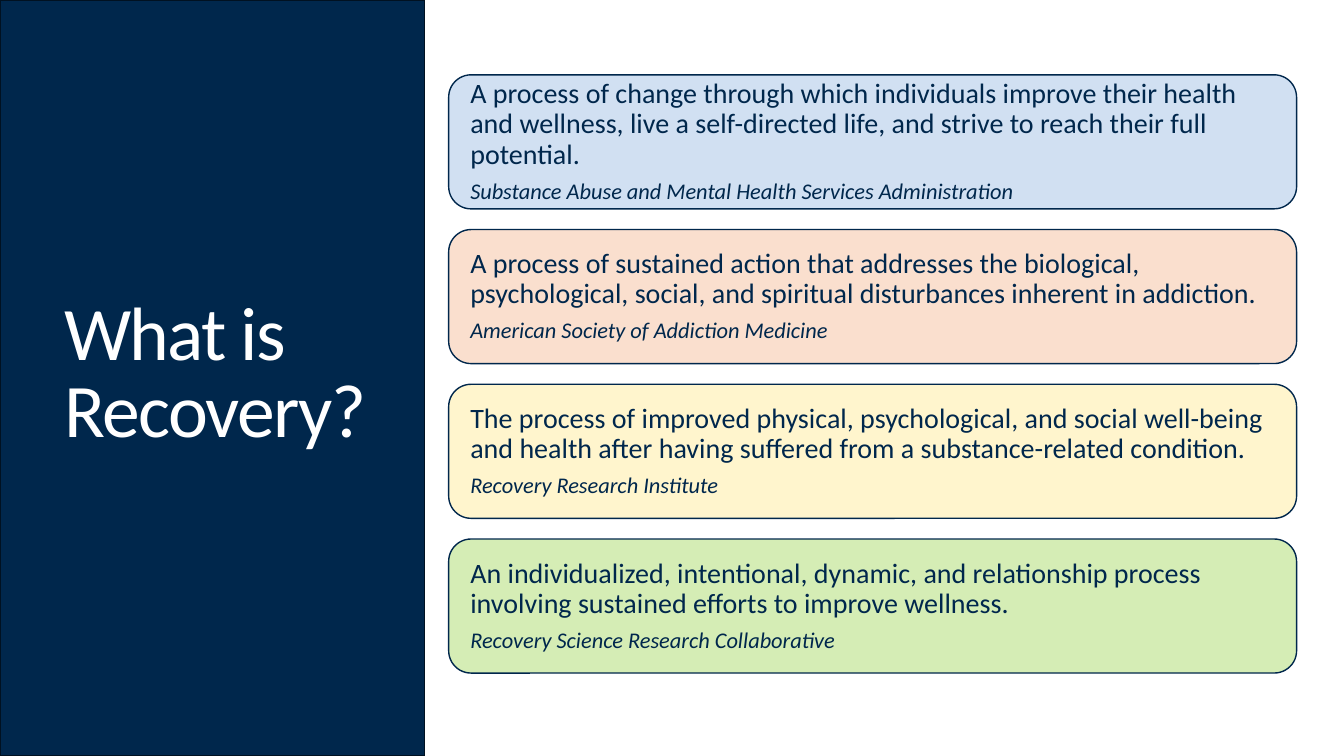
"""Build the "What is Recovery?" slide: a title panel beside four definition cards."""
from pptx import Presentation
from pptx.dml.color import RGBColor
from pptx.enum.shapes import MSO_SHAPE
from pptx.enum.text import MSO_ANCHOR, PP_ALIGN
from pptx.util import Inches, Pt

FONT = "Calibri"
NAVY, EDGE, WHITE = "00274C", "001121", "FFFFFF"
TITLE = "What is Recovery?"
CARDS = [
    ("A process of change through which individuals improve their health and wellness, "
     "live a self-directed life, and strive to reach their full potential.",
     "Substance Abuse and Mental Health Services Administration", "D1E0F2"),
    ("A process of sustained action that addresses the biological, psychological, social, "
     "and spiritual disturbances inherent in addiction.",
     "American Society of Addiction Medicine", "FADFCE"),
    ("The process of improved physical, psychological, and social well-being and health "
     "after having suffered from a substance-related condition.",
     "Recovery Research Institute", "FFF5CD"),
    ("An individualized, intentional, dynamic, and relationship process involving "
     "sustained efforts to improve wellness.",
     "Recovery Science Research Collaborative", "D5EDB5"),
]
SLIDE_W, SLIDE_H, PANEL_W = 13.33, 7.5, 4.21
CARD_X, CARD_W, CARD_H, GAP, PAD = 4.45, 8.41, 1.33, 0.205, 0.15


def color(value):
    return RGBColor.from_string(value)


def add_box(slide, kind, x, y, w, h, fill, line):
    sp = slide.shapes.add_shape(kind, Inches(x), Inches(y), Inches(w), Inches(h))
    sp.shadow.inherit = False
    sp.fill.solid()
    sp.fill.fore_color.rgb = color(fill)
    sp.line.color.rgb = color(line)
    sp.line.width = Pt(1)
    return sp


def style(p, size, ink, spacing, italic=False):
    p.alignment = PP_ALIGN.LEFT
    p.line_spacing = spacing
    font = p.runs[0].font
    font.name, font.size, font.italic = FONT, Pt(size), italic
    font.color.rgb = color(ink)


def add_title(slide):
    sp = slide.shapes.add_textbox(Inches(0.54), Inches(0.57), Inches(3.37), Inches(6.31))
    tf = sp.text_frame
    tf.word_wrap = True
    tf.vertical_anchor = MSO_ANCHOR.MIDDLE
    tf.text = TITLE
    p = tf.paragraphs[0]
    style(p, 54, WHITE, 0.85)
    p.runs[0].font._element.set("spc", "-120")


def add_card(slide, y, definition, source, fill):
    sp = add_box(slide, MSO_SHAPE.ROUNDED_RECTANGLE, CARD_X, y, CARD_W, CARD_H, fill, NAVY)
    tf = sp.text_frame
    tf.word_wrap = True
    tf.vertical_anchor = MSO_ANCHOR.MIDDLE
    tf.margin_left = tf.margin_right = Inches(PAD)
    tf.margin_top = tf.margin_bottom = Inches(PAD)
    tf.text = f"{definition}\n{source}"
    body, credit = tf.paragraphs
    style(body, 20, NAVY, 0.9)
    body.space_after = Pt(7)
    style(credit, 16, NAVY, 0.9, italic=True)


def main():
    prs = Presentation()
    prs.slide_width, prs.slide_height = Inches(SLIDE_W), Inches(SLIDE_H)
    slide = prs.slides.add_slide(prs.slide_layouts[6])
    add_box(slide, MSO_SHAPE.RECTANGLE, 0, 0, PANEL_W, SLIDE_H, NAVY, EDGE)
    add_title(slide)
    stack_h = len(CARDS) * (CARD_H + GAP) - GAP
    top = (SLIDE_H - stack_h) / 2 - 0.04
    for i, card in enumerate(CARDS):
        add_card(slide, top + i * (CARD_H + GAP), *card)
    prs.save("out.pptx")


if __name__ == "__main__":
    main()
